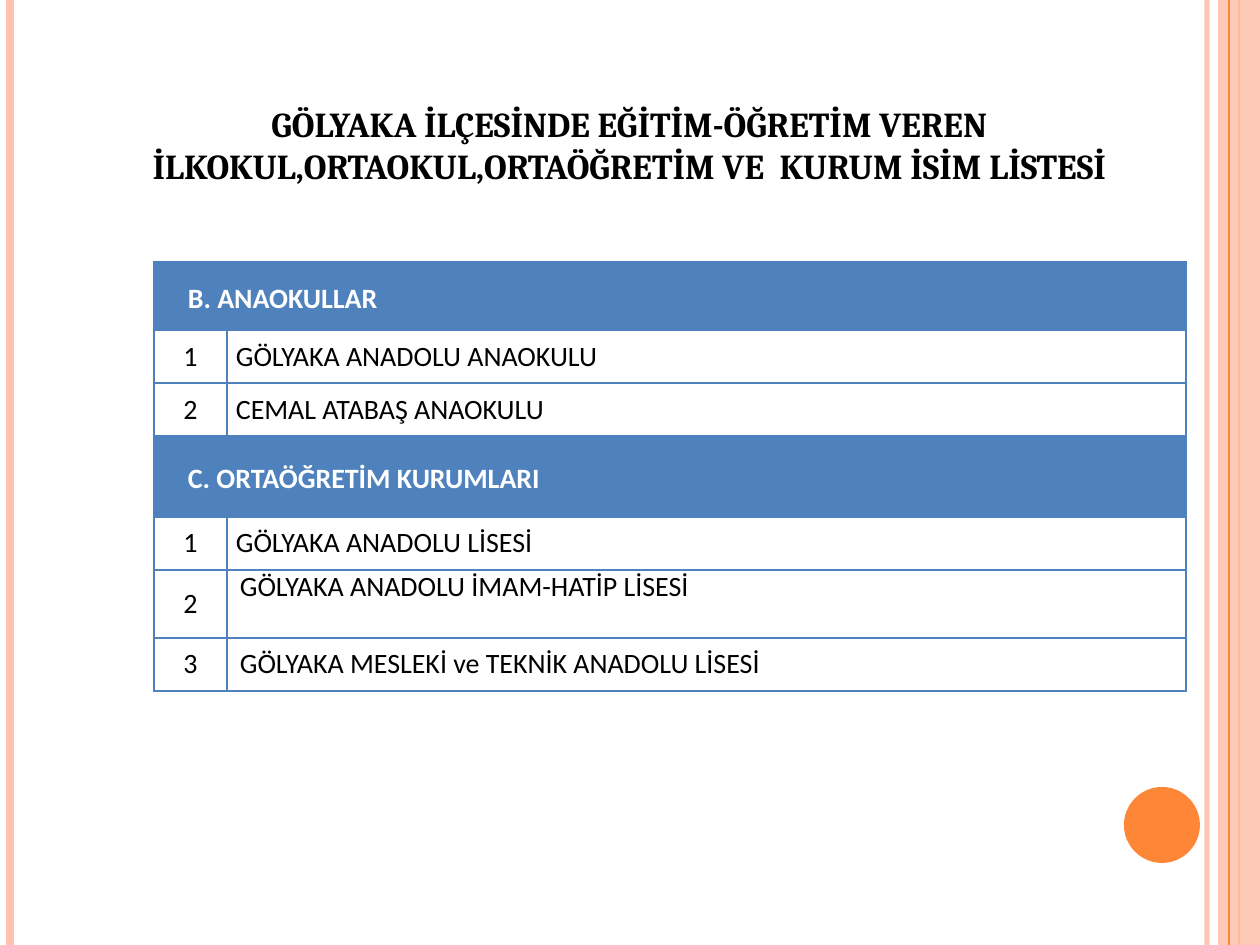
import lxml.etree
import pptx
import pptx.dml.color
import pptx.enum.shapes
import pptx.enum.text
import pptx.oxml.ns
import pptx.util

RGB = pptx.dml.color.RGBColor
SHAPE = pptx.enum.shapes.MSO_SHAPE
ALIGN = pptx.enum.text.PP_ALIGN
ANCHOR = pptx.enum.text.MSO_ANCHOR

PINK = RGB(0xFE, 0xC3, 0xAE)
ORANGE = RGB(0xFE, 0x86, 0x37)
BLUE = RGB(0x4F, 0x81, 0xBD)
WHITE = RGB(0xFF, 0xFF, 0xFF)
BLACK = RGB(0, 0, 0)

SCALE = 914400 / 126
SLIDE_WIDTH, SLIDE_HEIGHT = 1260, 945

TITLE = ("GÖLYAKA İLÇESİNDE EĞİTİM-ÖĞRETİM VEREN "
         "İLKOKUL,ORTAOKUL,ORTAÖĞRETİM VE  KURUM İSİM LİSTESİ")

# Heading, heading height, then (school, row height, side inset, anchor)
SECTIONS = [
    ("B. ANAOKULLAR", 68, [
        ("GÖLYAKA ANADOLU ANAOKULU", 53, 9, ANCHOR.MIDDLE),
        ("CEMAL ATABAŞ ANAOKULU", 53, 9, ANCHOR.MIDDLE),
    ]),
    ("C. ORTAÖĞRETİM KURUMLARI", 81, [
        ("GÖLYAKA ANADOLU LİSESİ", 53, 9, ANCHOR.MIDDLE),
        ("GÖLYAKA ANADOLU İMAM-HATİP LİSESİ", 68, 13, ANCHOR.TOP),
        ("GÖLYAKA MESLEKİ ve TEKNİK ANADOLU LİSESİ", 53, 13, ANCHOR.MIDDLE),
    ]),
]
TABLE_LEFT, TABLE_TOP = 154, 262
COLUMN_WIDTHS = [73, 959]


def px(length):
    return pptx.util.Emu(round(length * SCALE))


def add_child(parent, tag, **attributes):
    return lxml.etree.SubElement(parent, pptx.oxml.ns.qn(tag), **attributes)


def set_alpha(element, percent):
    """Make the solid colour inside the element partly transparent."""
    colour = next(element.iter(pptx.oxml.ns.qn("a:srgbClr")))
    add_child(colour, "a:alpha", val=str(percent * 1000))


def write(frame, text, *, font, size, colour=BLACK, bold=False,
          align=ALIGN.LEFT, spacing=None):
    para = frame.paragraphs[0]
    para.alignment = align
    para.line_spacing = spacing
    span = para.add_run()
    span.text = text
    span.font.name = font
    span.font.size = pptx.util.Pt(size)
    span.font.bold = bold
    span.font.color.rgb = colour


def add_stripe(page, x, colour, width, alpha=100):
    stripe = page.shapes.add_connector(
        pptx.enum.shapes.MSO_CONNECTOR.STRAIGHT, px(x), 0, px(x), px(SLIDE_HEIGHT))
    stripe.line.color.rgb = colour
    stripe.line.width = pptx.util.Pt(width)
    properties = stripe._element.spPr
    if alpha < 100:
        set_alpha(properties, alpha)
    add_child(properties, "a:effectLst")


def add_plain_shape(page, kind, left, top, width, height, colour):
    shape = page.shapes.add_shape(kind, px(left), px(top), px(width), px(height))
    shape.shadow.inherit = False
    shape.fill.solid()
    shape.fill.fore_color.rgb = colour
    shape.line.fill.background()
    return shape


def add_borders(cell):
    properties = cell._tc.get_or_add_tcPr()
    for index, side in enumerate(("a:lnL", "a:lnR", "a:lnT", "a:lnB")):
        border = add_child(properties, side, w=str(pptx.util.Pt(1)))
        add_child(add_child(border, "a:solidFill"), "a:srgbClr", val=str(BLUE))
        properties.insert(index, border)


def fill_cell(cell, text, *, inset, indent=0, anchor=ANCHOR.MIDDLE, fill=None, **text_format):
    cell.margin_left, cell.margin_right = px(inset + indent), px(inset)
    cell.margin_top = cell.margin_bottom = 0
    cell.vertical_anchor = anchor
    if fill is None:
        cell.fill.background()
    else:
        cell.fill.solid()
        cell.fill.fore_color.rgb = fill
    write(cell.text_frame, text, font="Calibri", size=16, **text_format)


def add_school_table(page):
    heights = []
    for _, heading_height, schools in SECTIONS:
        heights += [heading_height] + [school[1] for school in schools]
    table = page.shapes.add_table(
        len(heights), len(COLUMN_WIDTHS), px(TABLE_LEFT), px(TABLE_TOP),
        px(sum(COLUMN_WIDTHS)), px(sum(heights))).table
    for column, width in zip(table.columns, COLUMN_WIDTHS):
        column.width = px(width)
    for row, height in zip(table.rows, heights):
        row.height = px(height)

    row = 0
    for heading, _, schools in SECTIONS:
        table.cell(row, 0).merge(table.cell(row, 1))
        fill_cell(table.cell(row, 0), heading, inset=9, indent=25, fill=BLUE,
                  colour=WHITE, bold=True, spacing=1.15)
        for number, (school, _, inset, anchor) in enumerate(schools, 1):
            fill_cell(table.cell(row + number, 0), str(number), inset=inset,
                      align=ALIGN.CENTER)
            fill_cell(table.cell(row + number, 1), school, inset=inset, anchor=anchor)
        row += 1 + len(schools)
    for cell in table.iter_cells():
        add_borders(cell)


def main():
    deck = pptx.Presentation()
    deck.slide_width, deck.slide_height = px(SLIDE_WIDTH), px(SLIDE_HEIGHT)
    page = deck.slides.add_slide(deck.slide_layouts[6])

    add_stripe(page, 1207, PINK, 3, alpha=93)
    add_stripe(page, 10, PINK, 4.5)
    add_stripe(page, 1239, ORANGE, 1.5)
    band = add_plain_shape(page, SHAPE.RECTANGLE, 1218, 0, 42, SLIDE_HEIGHT, PINK)
    set_alpha(band._element.spPr, 87)
    add_stripe(page, 1229, ORANGE, 0.75)
    add_plain_shape(page, SHAPE.OVAL, 1124, 787, 76, 76, ORANGE)

    add_school_table(page)

    title = page.shapes.add_textbox(px(120), px(96), px(1019), px(97))
    title.text_frame.word_wrap = True
    write(title.text_frame, TITLE, font="Cambria", size=20, bold=True, align=ALIGN.CENTER)

    deck.save("out.pptx")


if __name__ == "__main__":
    main()
